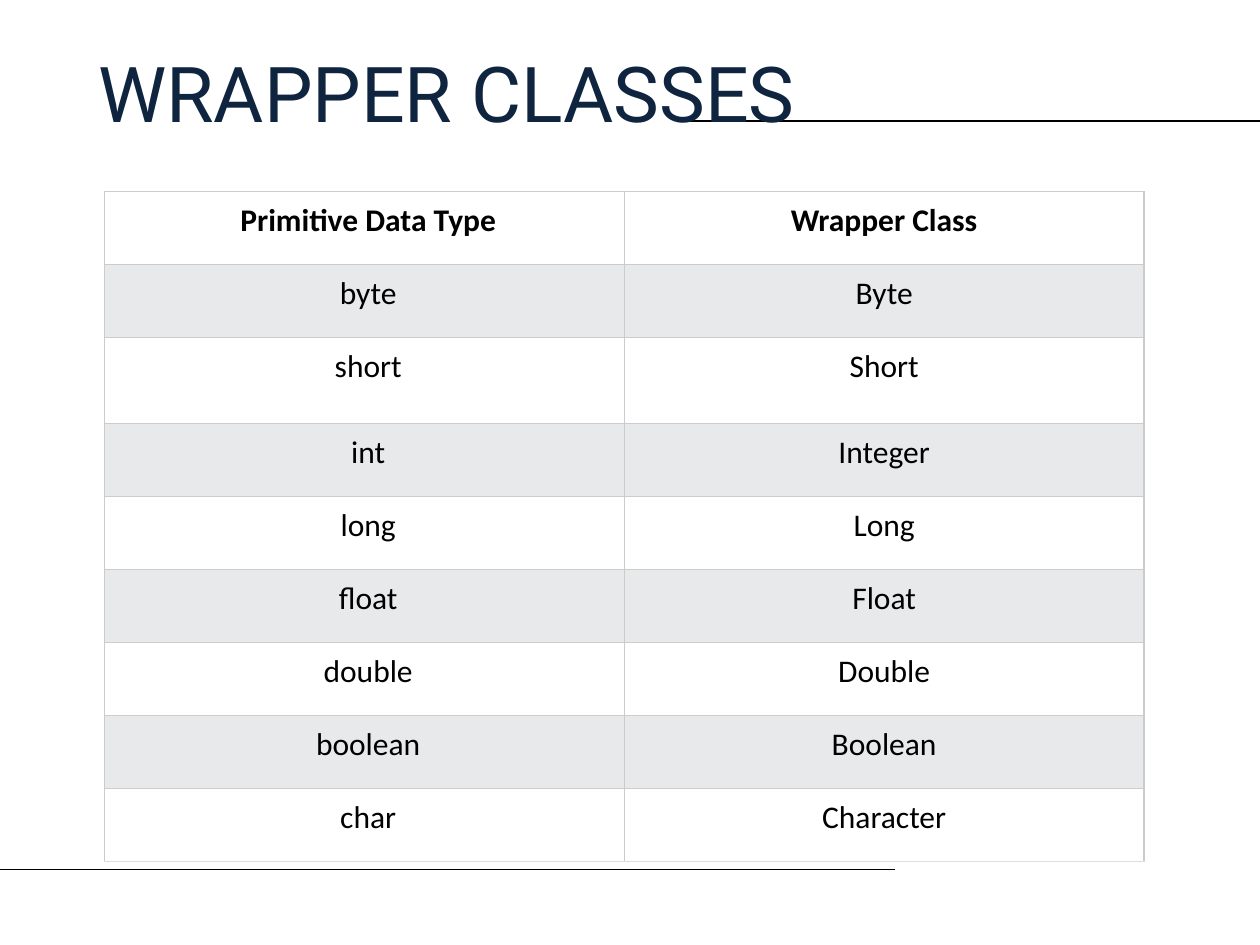
from collections import namedtuple
from dataclasses import dataclass

from pptx import Presentation
from pptx.dml.color import RGBColor as Color
from pptx.enum.shapes import MSO_CONNECTOR as Connector
from pptx.enum.text import MSO_ANCHOR as Anchor, MSO_AUTO_SIZE as AutoSize, PP_ALIGN as Align
from pptx.oxml import parse_xml
from pptx.oxml.ns import nsdecls
from pptx.util import Inches, Pt

Box = namedtuple("Box", "left top width height")


@dataclass(frozen=True)
class Theme:
    title_font: str = "Roboto"
    body_font: str = "Calibri"
    title_size: int = 44
    body_size: int = 18
    line_width: float = 0.75
    title_color: str = "0F243E"
    ink: str = "000000"
    plain: str = "FFFFFF"
    band: str = "E7E9EB"
    grid: str = "CCCCCC"
    grid_end: str = "DDDDDD"


THEME = Theme()
ROWS = [
    ("Primitive Data Type", "Wrapper Class"),
    ("byte", "Byte"),
    ("short", "Short"),
    ("int", "Integer"),
    ("long", "Long"),
    ("float", "Float"),
    ("double", "Double"),
    ("boolean", "Boolean"),
    ("char", "Character"),
]
ROW_HEIGHT = 0.58
TALL_ROW = 2
TALL_ROW_EXTRA = 0.1


def style_font(font, name, size, color, bold=False):
    font.name = name
    font.size = Pt(size)
    font.bold = bold
    font.color.rgb = Color.from_string(color)


def add_rule(page, box):
    left, top, width, height = map(Inches, box)
    rule = page.shapes.add_connector(Connector.STRAIGHT, left, top, left + width, top + height)
    rule.line.color.rgb = Color.from_string(THEME.ink)
    rule.line.width = Pt(THEME.line_width)
    rule.element.spPr.append(parse_xml(f"<a:effectLst {nsdecls('a')}/>"))
    page.shapes.title.element.addprevious(rule.element)


def place_title(page, box, text):
    title = page.shapes.title
    title.left, title.top, title.width, title.height = map(Inches, box)
    frame = title.text_frame
    frame.text = text
    frame.word_wrap = True
    frame.auto_size = AutoSize.SHAPE_TO_FIT_TEXT
    frame.vertical_anchor = Anchor.TOP
    para = frame.paragraphs[0]
    para.alignment = Align.LEFT
    style_font(para.font, THEME.title_font, THEME.title_size, THEME.title_color)


def add_borders(cell, bottom):
    properties = cell._tc.get_or_add_tcPr()
    colors = {"lnL": THEME.grid, "lnR": THEME.grid, "lnT": THEME.grid, "lnB": bottom}
    for side, color in colors.items():
        properties.append(parse_xml(
            f'<a:{side} {nsdecls("a")} w="{Pt(THEME.line_width)}"><a:solidFill>'
            f'<a:srgbClr val="{color}"/></a:solidFill></a:{side}>'
        ))


def fill_cell(cell, text, row, column):
    last = row == len(ROWS) - 1
    add_borders(cell, THEME.grid_end if last else THEME.grid)
    cell.fill.solid()
    cell.fill.fore_color.rgb = Color.from_string(THEME.band if row % 2 else THEME.plain)
    cell.margin_left = Inches(0.06 if column else 0.12)
    cell.margin_right = Inches(0.06)
    cell.margin_top = cell.margin_bottom = Inches(0.08)
    cell.text = text
    para = cell.text_frame.paragraphs[0]
    para.alignment = Align.CENTER
    style_font(para.font, THEME.body_font, THEME.body_size, THEME.ink, bold=row == 0)


def add_type_table(page, box):
    table = page.shapes.add_table(len(ROWS), len(ROWS[0]), *map(Inches, box)).table
    for column in table.columns:
        column.width = Inches(box.width / len(ROWS[0]))
    for row, texts in enumerate(ROWS):
        extra = TALL_ROW_EXTRA if row == TALL_ROW else 0
        table.rows[row].height = Inches(ROW_HEIGHT + extra)
        for column, text in enumerate(texts):
            fill_cell(table.cell(row, column), text, row, column)


def build_wrapper_page(deck, box):
    page = deck.slides.add_slide(deck.slide_layouts[5])
    add_rule(page, Box(box.left, box.height * 0.92, box.width * 0.71, 0))
    add_rule(page, Box(box.width * 0.541, box.height * 0.128, box.width * 0.459, 0))
    place_title(page, Box(0.68, 0.31, 8.15, 0.84), "WRAPPER CLASSES")
    table_height = ROW_HEIGHT * len(ROWS) + TALL_ROW_EXTRA
    add_type_table(page, Box(0.83, 1.52, 8.25, table_height))


def main():
    deck = Presentation()
    deck.slide_width, deck.slide_height = Inches(10), Inches(7.5)
    build_wrapper_page(deck, Box(0, 0, 10, 7.5))
    deck.save("out.pptx")


if __name__ == "__main__":
    main()
